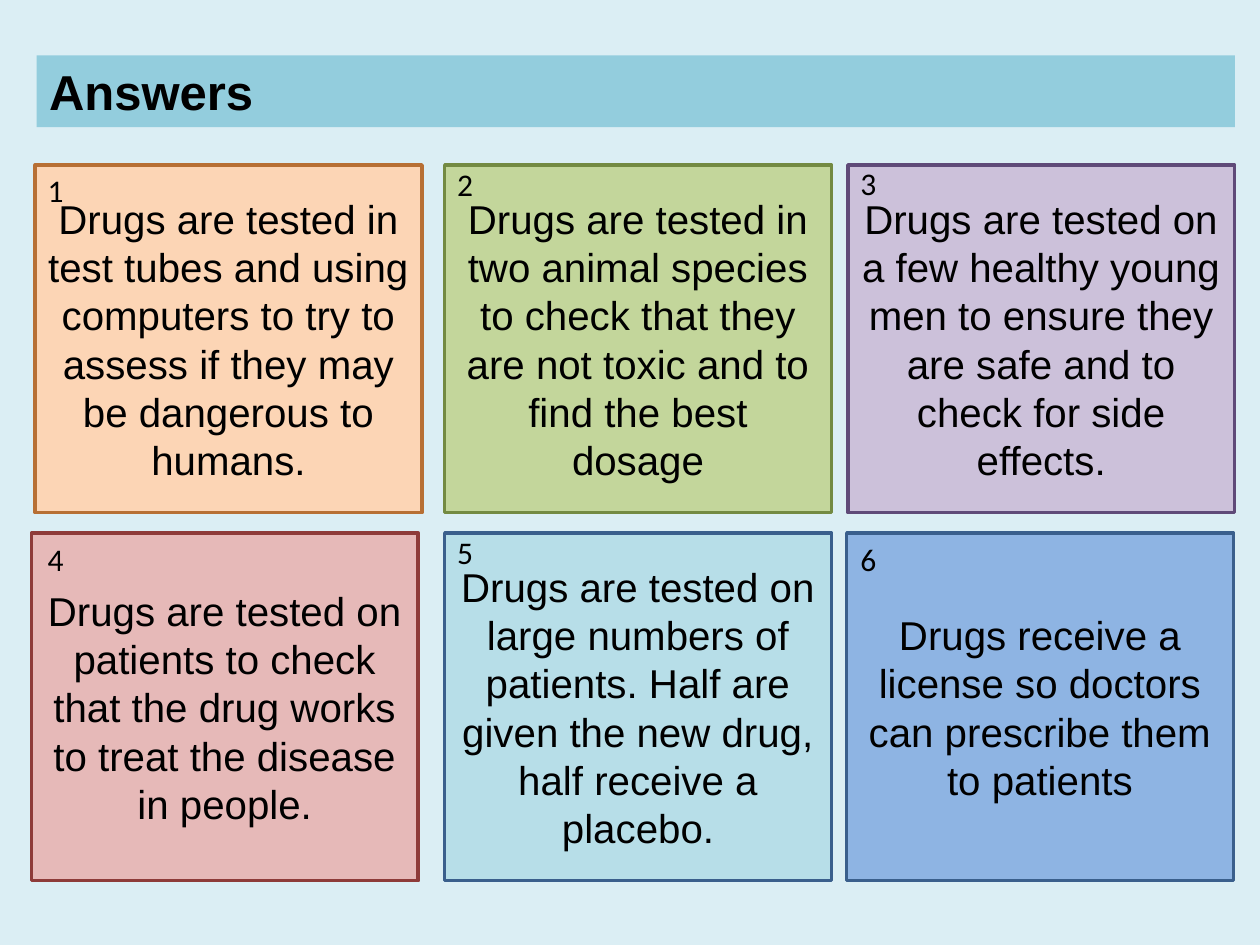
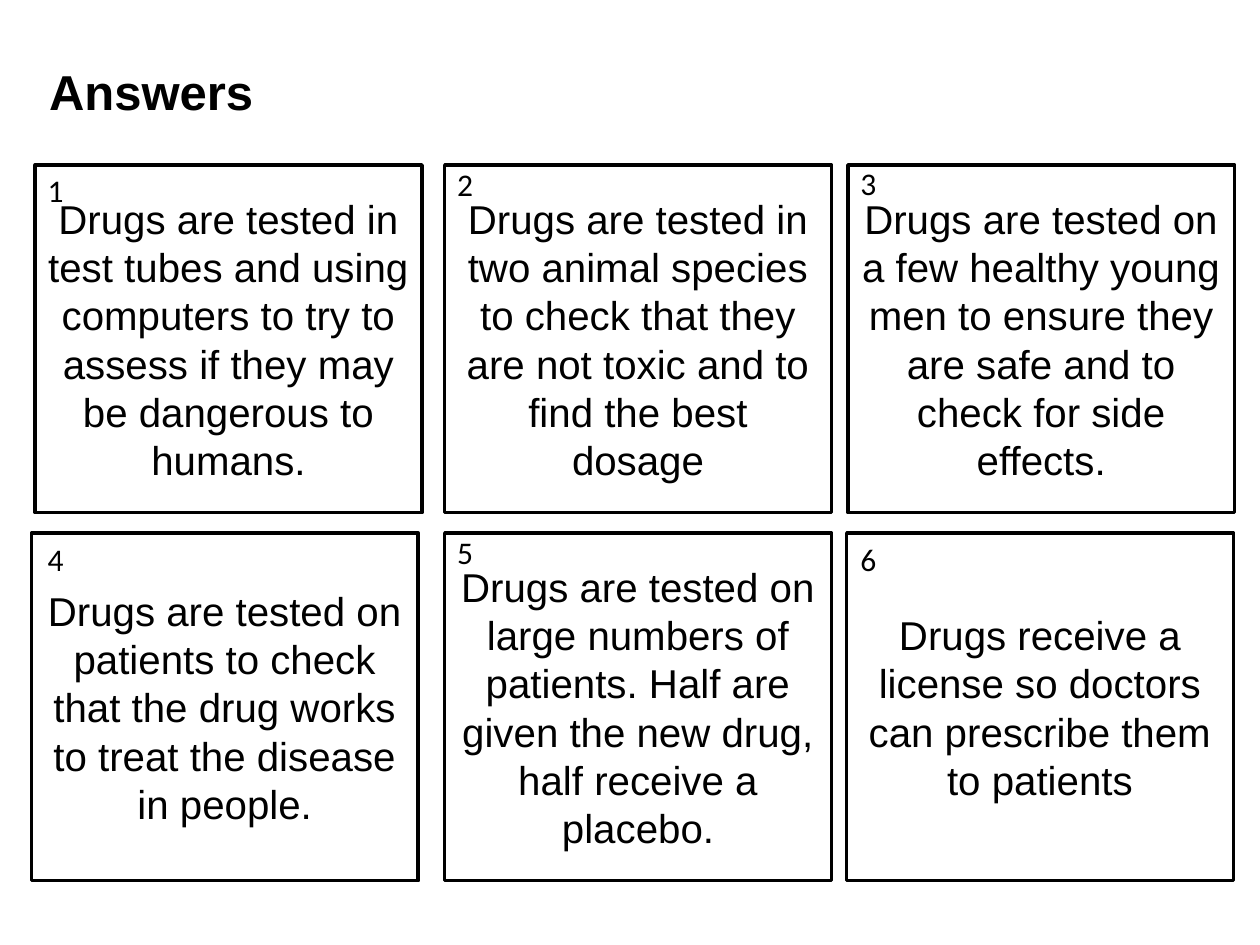
from dataclasses import dataclass

from pptx import Presentation
from pptx.dml.color import RGBColor
from pptx.enum.shapes import MSO_SHAPE
from pptx.enum.text import MSO_ANCHOR, MSO_AUTO_SIZE, PP_ALIGN
from pptx.util import Inches, Pt

RECTANGLE = MSO_SHAPE.RECTANGLE
TOP, MIDDLE = MSO_ANCHOR.TOP, MSO_ANCHOR.MIDDLE
LEFT, CENTER = PP_ALIGN.LEFT, PP_ALIGN.CENTER
FIXED_SIZE, GROW = MSO_AUTO_SIZE.NONE, MSO_AUTO_SIZE.SHAPE_TO_FIT_TEXT
TITLE_ONLY_LAYOUT = 5

# Colours
BLACK = RGBColor(0x00, 0x00, 0x00)
WHITE = RGBColor(0xFF, 0xFF, 0xFF)
PALE_BLUE = RGBColor(0xDB, 0xEE, 0xF4)
BAND_BLUE = RGBColor(0x93, 0xCD, 0xDD)
ORANGE, ORANGE_EDGE = RGBColor(0xFC, 0xD5, 0xB5), RGBColor(0xB7, 0x6F, 0x34)
GREEN, GREEN_EDGE = RGBColor(0xC3, 0xD6, 0x9B), RGBColor(0x73, 0x8A, 0x42)
PURPLE, PURPLE_EDGE = RGBColor(0xCC, 0xC1, 0xDA), RGBColor(0x5F, 0x4A, 0x78)
RED, RED_EDGE = RGBColor(0xE6, 0xB9, 0xB8), RGBColor(0x8E, 0x3B, 0x39)
AQUA, BLUE = RGBColor(0xB7, 0xDE, 0xE8), RGBColor(0x8E, 0xB4, 0xE3)
BLUE_EDGE = RGBColor(0x3A, 0x5F, 0x8C)

# Shared layout, in inches
CARD_WIDTH, CARD_HEIGHT = 3.07, 2.76
ROW_TOPS = (1.31, 4.23)
NUMBER_LEFTS = (0.28, 3.53, 6.73)


@dataclass
class Stage:
    text: str
    left: float
    number_top: float


STAGES = [
    Stage("Drugs are tested in test tubes and using computers to try to "
          "assess if they may be dangerous to humans.", 0.28, 1.31),
    Stage("Drugs are tested in two animal species to check that they are "
          "not toxic and to find the best dosage", 3.53, 1.26),
    Stage("Drugs are tested on a few healthy young men to ensure they are "
          "safe and to check for side effects.", 6.73, 1.25),
    Stage("Drugs are tested on patients to check that the drug works to "
          "treat the disease in people.", 0.25, 4.24),
    Stage("Drugs are tested on large numbers of patients. Half are given "
          "the new drug, half receive a placebo.", 3.53, 4.18),
    Stage("Drugs receive a license so doctors can prescribe them to "
          "patients", 6.72, 4.24),
]

# Fill and edge of each card
COLOUR_CARDS = [
    (ORANGE, ORANGE_EDGE), (GREEN, GREEN_EDGE), (PURPLE, PURPLE_EDGE),
    (RED, RED_EDGE), (AQUA, BLUE_EDGE), (BLUE, BLUE_EDGE),
]
PLAIN_CARDS = [(WHITE, BLACK)] * len(STAGES)


def paint(target, colour):
    target.fill.solid()
    target.fill.fore_color.rgb = colour


def write(frame, text, font, size, align=LEFT, bold=False):
    para = frame.paragraphs[0]
    para.alignment = align
    span = para.add_run()
    span.text = text
    span.font.name = font
    span.font.size = Pt(size)
    span.font.bold = bold
    span.font.color.rgb = BLACK


def add_title(page, text, band_colour):
    title = page.shapes.title
    title.left, title.top = Inches(0.29), Inches(0.44)
    title.width, title.height = Inches(9.51), Inches(0.57)
    paint(title, band_colour)
    frame = title.text_frame
    frame.auto_size = FIXED_SIZE
    frame.vertical_anchor = TOP
    write(frame, text, "Arial", 28, bold=True)


def add_card(page, stage, top, fill, edge):
    card = page.shapes.add_shape(
        RECTANGLE, Inches(stage.left), Inches(top),
        Inches(CARD_WIDTH), Inches(CARD_HEIGHT))
    card.shadow.inherit = False
    paint(card, fill)
    card.line.color.rgb = edge
    card.line.width = Pt(2)
    frame = card.text_frame
    frame.word_wrap = True
    frame.vertical_anchor = MIDDLE
    write(frame, stage.text, "Arial", 23, CENTER)


def add_number(page, number, left, top):
    box = page.shapes.add_textbox(
        Inches(left), Inches(top), Inches(0.33), Inches(0.4))
    frame = box.text_frame
    frame.word_wrap = False
    frame.auto_size = GROW
    write(frame, str(number), "Calibri", 18)


def add_answers_page(deck, background, band_colour, card_colours):
    page = deck.slides.add_slide(deck.slide_layouts[TITLE_ONLY_LAYOUT])
    paint(page.background, background)
    add_title(page, "Answers", band_colour)
    for index, (stage, (fill, edge)) in enumerate(zip(STAGES, card_colours)):
        row, column = divmod(index, len(NUMBER_LEFTS))
        add_card(page, stage, ROW_TOPS[row], fill, edge)
        add_number(page, index + 1, NUMBER_LEFTS[column], stage.number_top)


def main():
    deck = Presentation()
    deck.slide_width, deck.slide_height = Inches(10), Inches(7.5)
    # Colour version, then black and white version
    add_answers_page(deck, PALE_BLUE, BAND_BLUE, COLOUR_CARDS)
    add_answers_page(deck, WHITE, WHITE, PLAIN_CARDS)
    deck.save("out.pptx")


if __name__ == "__main__":
    main()
